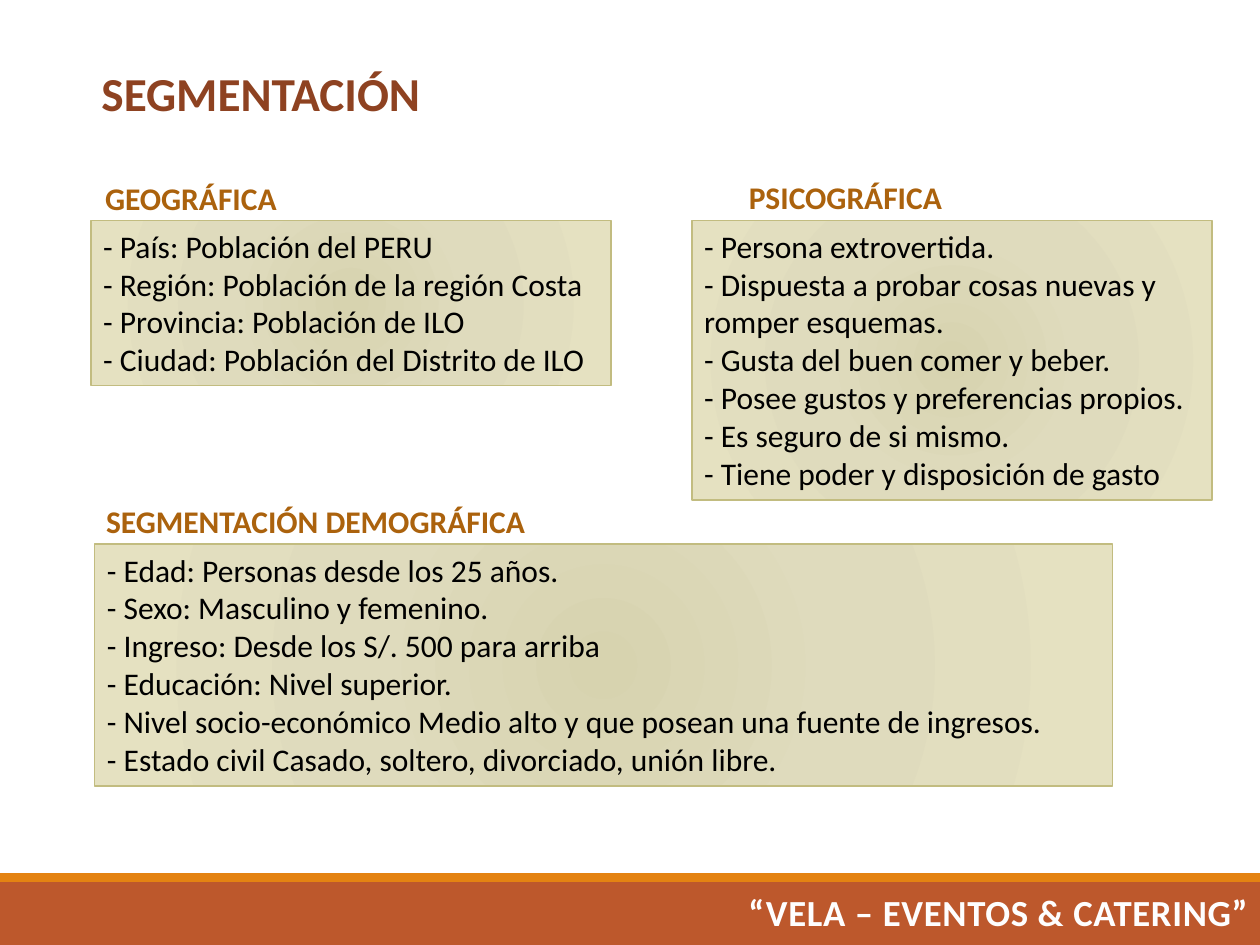
import dataclasses

import pptx
import pptx.dml.color
import pptx.enum.text
import pptx.oxml
import pptx.oxml.ns
import pptx.util

COLUMNS, ROWS = 100, 75
TEXT = pptx.enum.text


@dataclasses.dataclass(frozen=True)
class Theme:
    font: str = "Calibri"
    title_size: int = 27
    brand_size: int = 21
    body_size: int = 18
    title: str = "8E4221"
    heading: str = "AB620D"
    body: str = "000000"
    brand: str = "FEFEFE"
    band: str = "BD582C"
    accent: str = "E48312"
    panel_line: str = "C2BC80"
    panel_stops: tuple = ((0, "D7D3AF"), (45, "DFDBBD"), (100, "E5E1C1"))


def rgb(value):
    return pptx.dml.color.RGBColor.from_string(value)


def make_xml(tag, content):
    return pptx.oxml.parse_xml(
        f'<a:{tag} {pptx.oxml.ns.nsdecls("a")}>{content}</a:{tag}>')


def write_text(shape, lines, *, font, size, color, bold=False, centred=False,
               wrap=True, insets=(0.1, 0.05), spacing=None, outline=None):
    frame = shape.text_frame
    frame.word_wrap = wrap
    frame.auto_size = TEXT.MSO_AUTO_SIZE.SHAPE_TO_FIT_TEXT
    frame.vertical_anchor = TEXT.MSO_ANCHOR.TOP
    frame.margin_left = frame.margin_right = pptx.util.Inches(insets[0])
    frame.margin_top = frame.margin_bottom = pptx.util.Inches(insets[1])
    for index, line in enumerate(lines):
        para = frame.add_paragraph() if index else frame.paragraphs[0]
        para.alignment = TEXT.PP_ALIGN.CENTER if centred else TEXT.PP_ALIGN.LEFT
        span = para.add_run()
        span.text = line
        span.font.name = font
        span.font.size = pptx.util.Pt(size)
        span.font.bold = bold
        span.font.color.rgb = rgb(color)
        properties = span.font._element
        if spacing:
            properties.set("spc", str(round(spacing * 100)))
        if outline:
            stroke = make_xml(
                "ln", f'<a:solidFill><a:srgbClr val="{outline}"/></a:solidFill>')
            stroke.set("w", str(pptx.util.Pt(0.75)))
            properties.insert(0, stroke)


class SlideBuilder:
    def __init__(self, deck, theme):
        self.deck = deck
        self.theme = theme
        self.page = deck.slides.add_slide(deck.slide_layouts[5])

    def place(self, left, top, width, height):
        across = self.deck.slide_width / COLUMNS
        down = self.deck.slide_height / ROWS
        return [pptx.util.Emu(round(value)) for value in
                (left * across, top * down, width * across, height * down)]

    def rectangle(self, *area):
        box = self.page.shapes.add_shape(
            pptx.enum.shapes.MSO_SHAPE.RECTANGLE, *self.place(*area))
        box.shadow.inherit = False
        return box

    def band(self, *area, color):
        box = self.rectangle(*area)
        box.fill.solid()
        box.fill.fore_color.rgb = rgb(color)
        box.line.fill.background()

    def format_label(self, box, text, **style):
        write_text(box, [text], font=self.theme.font, bold=True, centred=True,
                   wrap=False, insets=(0.07, 0.04), **style)

    def title(self, text, *area):
        box = self.page.shapes.title
        box.left, box.top, box.width, box.height = self.place(*area)
        self.format_label(box, text, size=self.theme.title_size,
                          color=self.theme.title)

    def label(self, text, *area, **style):
        box = self.page.shapes.add_textbox(*self.place(*area))
        self.format_label(box, text, **style)

    def heading(self, text, *area):
        self.label(text, *area, size=self.theme.body_size,
                   color=self.theme.heading)

    def panel(self, lines, *area):
        box = self.rectangle(*area)
        box.fill.gradient()
        gradient = box._element.spPr.find(pptx.oxml.ns.qn("a:gradFill"))
        for child in list(gradient):
            gradient.remove(child)
        stops = "".join(
            f'<a:gs pos="{share * 1000}"><a:srgbClr val="{color}"/></a:gs>'
            for share, color in self.theme.panel_stops)
        gradient.append(make_xml("gsLst", stops))
        path = make_xml(
            "path", '<a:fillToRect l="100000" t="100000" r="100000" b="100000"/>')
        path.set("path", "circle")
        gradient.append(path)
        box.line.color.rgb = rgb(self.theme.panel_line)
        box.line.width = pptx.util.Pt(1)
        write_text(box, [f"- {line}" for line in lines], font=self.theme.font,
                   size=self.theme.body_size, color=self.theme.body)


def main():
    deck = pptx.Presentation()
    deck.slide_width = pptx.util.Inches(10)
    deck.slide_height = pptx.util.Inches(7.5)
    theme = Theme()
    slide = SlideBuilder(deck, theme)

    slide.band(0, 70, COLUMNS, 5, color=theme.band)
    slide.band(0, 69.3, COLUMNS, 0.7, color=theme.accent)
    slide.title("SEGMENTACIÓN", 7.2, 4.7, 27, 5.3)
    slide.label("“VELA – EVENTOS & CATERING”", 58.6, 70.2, 41.3, 4.3,
                size=theme.brand_size, color=theme.brand, spacing=0.4,
                outline=theme.accent)

    slide.heading("GEOGRÁFICA", 7.5, 13.8, 15.3, 3.8)
    slide.panel([
        "País: Población del PERU",
        "Región: Población de la región Costa",
        "Provincia: Población de ILO",
        "Ciudad: Población del Distrito de ILO",
    ], 7.2, 17.5, 41.3, 13.1)

    slide.heading("PSICOGRÁFICA", 58.6, 13.7, 17, 3.8)
    slide.panel([
        "Persona extrovertida.",
        "Dispuesta a probar cosas nuevas y romper esquemas.",
        "Gusta del buen comer y beber.",
        "Posee gustos y preferencias propios.",
        "Es seguro de si mismo.",
        "Tiene poder y disposición de gasto",
    ], 54.9, 17.5, 41.3, 22.2)

    slide.heading("SEGMENTACIÓN DEMOGRÁFICA", 7.5, 39.4, 35.1, 3.8)
    slide.panel([
        "Edad: Personas desde los 25 años.",
        "Sexo: Masculino y femenino.",
        "Ingreso: Desde los S/. 500 para arriba",
        "Educación: Nivel superior.",
        "Nivel socio-económico Medio alto y que posean una fuente de ingresos.",
        "Estado civil Casado, soltero, divorciado, unión libre.",
    ], 7.5, 43.2, 80.8, 19.2)

    deck.save("out.pptx")


if __name__ == "__main__":
    main()
